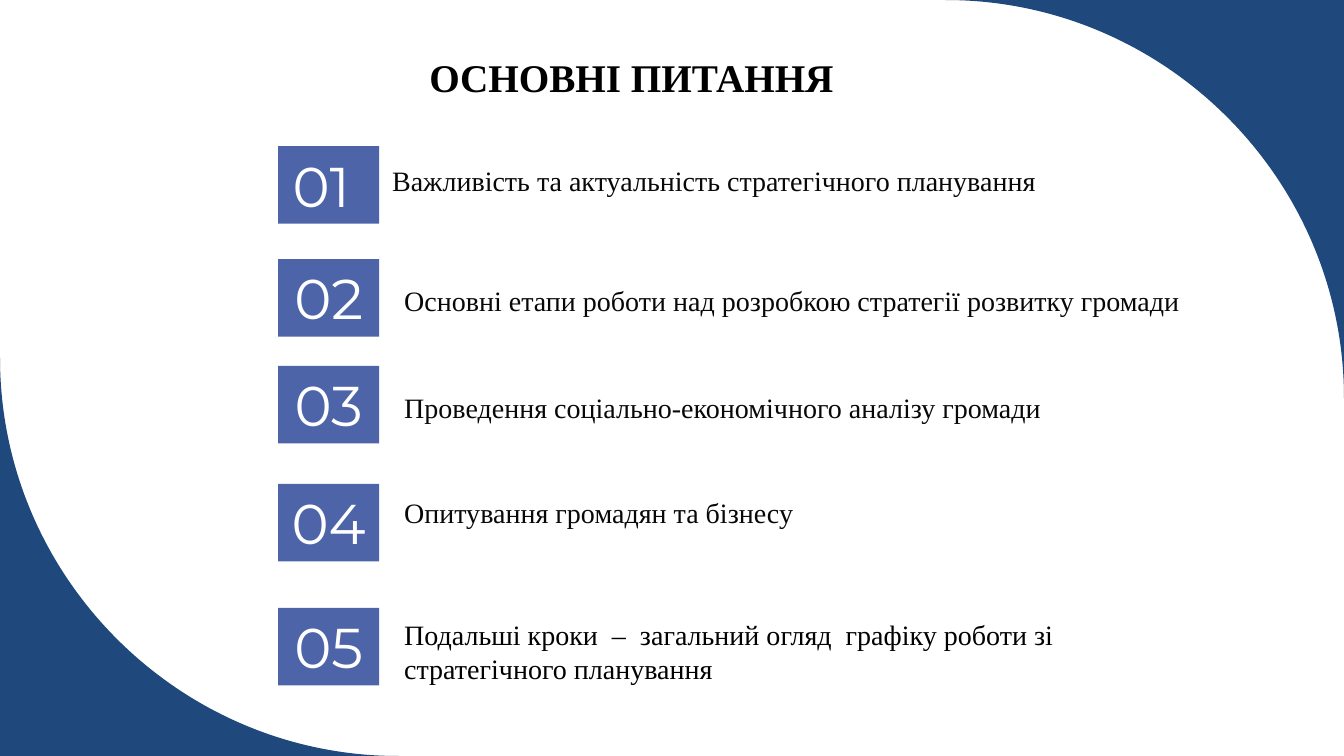
from lxml.etree import SubElement
from pptx import Presentation
from pptx.dml.color import RGBColor
from pptx.enum.shapes import MSO_SHAPE
from pptx.enum.text import MSO_ANCHOR, PP_ALIGN
from pptx.oxml.ns import qn
from pptx.util import Inches, Pt

NAVY = RGBColor(0x1F, 0x49, 0x7D)
BADGE_BLUE = RGBColor(0x4D, 0x64, 0xA9)
WHITE = RGBColor(0xFF, 0xFF, 0xFF)
BLACK = RGBColor(0x00, 0x00, 0x00)
NEAR_BLACK = RGBColor(0x08, 0x08, 0x08)
TEXT_FONT = "Times New Roman"
NUMBER_FONT = "Montserrat"

SLIDE_WIDTH, SLIDE_HEIGHT = 13.33, 7.5
CORNER_SIZE = 3.95
ARC_PULL = 0.55  # share of the way to the corner that makes a quarter circle
BADGE_LEFT, BADGE_WIDTH, BADGE_HEIGHT = 2.76, 1, 0.77

# Badge top, text box (left, top, width, height), wording, text colour
QUESTIONS = [
    (1.45, (3.79, 1.57, 10.75, 0.58),
     "Важливість та актуальність стратегічного планування", NEAR_BLACK),
    (2.57, (3.91, 2.76, 10.07, 0.58),
     "Основні етапи роботи над розробкою стратегії розвитку громади", NEAR_BLACK),
    (3.63, (3.91, 3.83, 10.07, 0.44),
     "Проведення соціально-економічного аналізу громади", NEAR_BLACK),
    (4.8, (3.91, 4.87, 10.07, 0.44),
     "Опитування громадян та бізнесу", NEAR_BLACK),
    (6.03, (3.91, 6.08, 7.12, 0.77),
     "Подальші кроки  –  загальний огляд  графіку роботи зі стратегічного планування",
     BLACK),
]


def paint(shape, color):
    shape.fill.solid()
    shape.fill.fore_color.rgb = color
    shape.line.fill.background()
    shape.shadow.inherit = False


def write(shape, text, font_name, size, color, bold=False):
    frame = shape.text_frame
    frame.word_wrap = True
    paragraph = frame.paragraphs[0]
    paragraph.text = text
    font = paragraph.font
    font.name, font.size, font.bold = font_name, Pt(size), bold
    font.color.rgb = color
    return paragraph


def add_text(slide, box, text, size, color, bold=False):
    text_box = slide.shapes.add_textbox(*map(Inches, box))
    write(text_box, text, TEXT_FONT, size, color, bold)


def bend_second_side(shape):
    """Turn the side opposite the starting corner into a quarter circle."""
    outline = shape.element.spPr.find(".//" + qn("a:path"))
    corner, start, end = [(int(point.get("x")), int(point.get("y")))
                          for point in outline.iter(qn("a:pt"))][:3]
    side = outline.findall(qn("a:lnTo"))[1]
    curve = SubElement(outline, qn("a:cubicBezTo"))
    controls = [[round(near + ARC_PULL * (far - near)) for near, far in zip(tip, corner)]
                for tip in (start, end)]
    for x, y in (*controls, end):
        SubElement(curve, qn("a:pt"), x=str(x), y=str(y))
    outline.replace(side, curve)


def add_corner(slide, corner, inward_x, inward_y):
    """Fill a slide corner outside the quarter circle that rounds it off."""
    x, y = corner
    builder = slide.shapes.build_freeform(Inches(x), Inches(y))
    builder.add_line_segments([
        (Inches(x + inward_x * CORNER_SIZE), Inches(y)),
        (Inches(x), Inches(y + inward_y * CORNER_SIZE)),
    ], close=True)
    shape = builder.convert_to_shape()
    bend_second_side(shape)
    paint(shape, NAVY)


def add_badge(slide, box, number):
    badge = slide.shapes.add_shape(MSO_SHAPE.RECTANGLE, *map(Inches, box))
    paint(badge, BADGE_BLUE)
    badge.text_frame.vertical_anchor = MSO_ANCHOR.TOP
    paragraph = write(badge, f"{number:02d} ", NUMBER_FONT, 40, WHITE)
    paragraph.alignment = PP_ALIGN.CENTER


def build_agenda(slide):
    # Rounded corners
    add_corner(slide, (SLIDE_WIDTH, 0), -1, 1)
    add_corner(slide, (0, SLIDE_HEIGHT), 1, -1)

    # Title
    add_text(slide, (4.16, 0.48, 7.07, 0.91), "ОСНОВНІ ПИТАННЯ", 28, BLACK, bold=True)

    # Numbered questions
    for number, (badge_top, text_area, wording, color) in enumerate(QUESTIONS, 1):
        add_text(slide, text_area, wording, 20, color)
        add_badge(slide, (BADGE_LEFT, badge_top, BADGE_WIDTH, BADGE_HEIGHT), number)


def main():
    presentation = Presentation()
    presentation.slide_width = Inches(SLIDE_WIDTH)
    presentation.slide_height = Inches(SLIDE_HEIGHT)
    slide = presentation.slides.add_slide(presentation.slide_layouts[6])
    build_agenda(slide)
    presentation.save("out.pptx")


if __name__ == "__main__":
    main()
